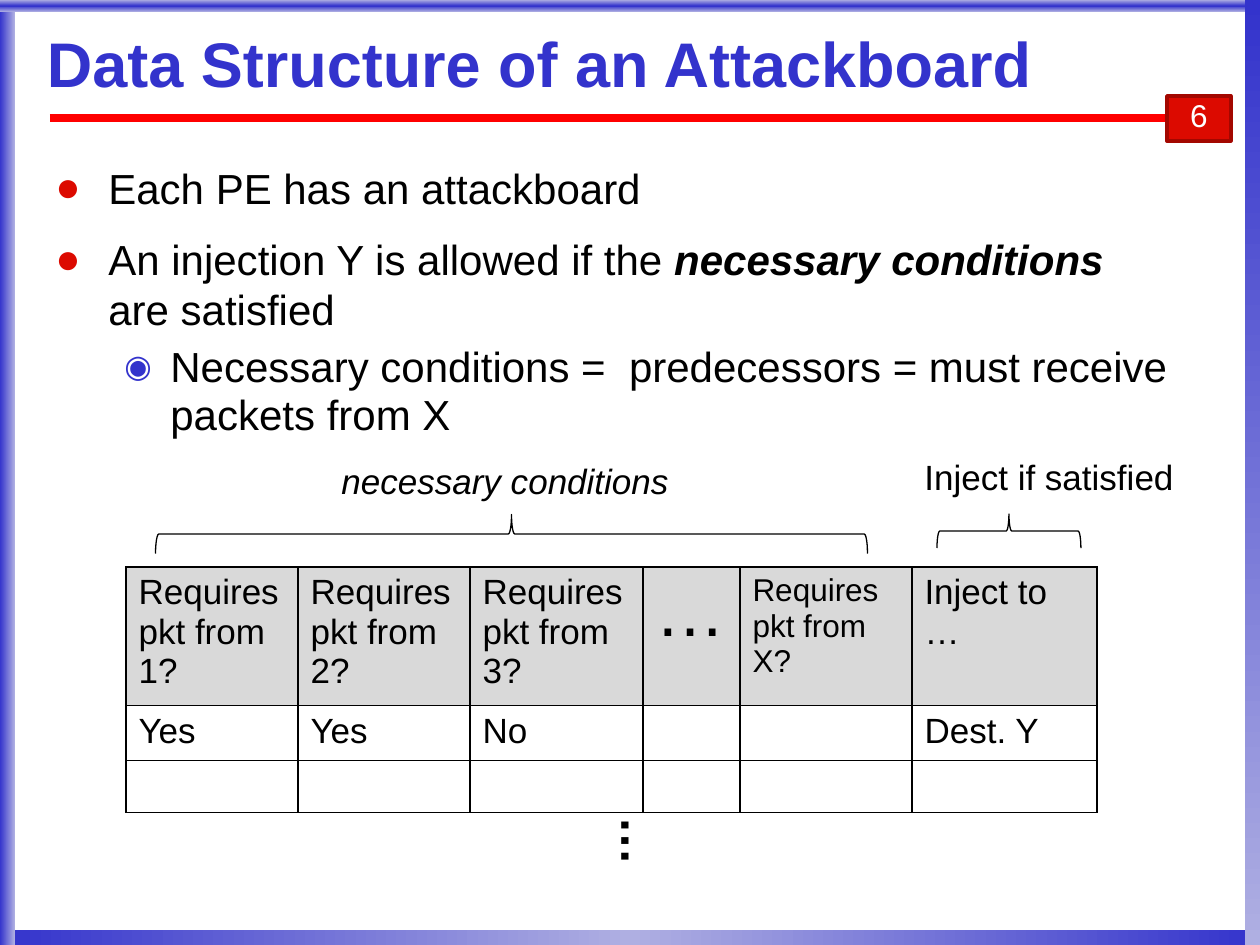
import pptx
import pptx.util
import pptx.dml.color
import pptx.enum.shapes
import pptx.enum.text
import pptx.oxml
import pptx.oxml.ns

PX = 914400 // 126
COLORS = {"blue": "3333CC", "pale": "AFAFE2", "red": "DC0A00", "dark_red": "A30700",
          "rule": "FF0000", "black": "000000", "white": "FFFFFF", "gray": "D9D9D9"}
SHAPES = pptx.enum.shapes.MSO_SHAPE


def rgb(name):
    """Return the named color."""
    return pptx.dml.color.RGBColor.from_string(COLORS[name])


def px(*lengths):
    """Turn px lengths into EMU."""
    return [pptx.util.Emu(length * PX) for length in lengths]


def xml(body):
    """Parse one element in the DrawingML namespace."""
    name, rest = body[1:].split(" ", 1)
    return pptx.oxml.parse_xml(f"<{name} {pptx.oxml.ns.nsdecls('a')} {rest}")


def add_run(paragraph, text, size=20, color="black", bold=False, italic=False):
    """Append formatted text to a paragraph and return the run."""
    run = paragraph.add_run()
    run.text = text
    font = run.font
    font.name, font.size = "Arial", pptx.util.Pt(size)
    font.bold, font.italic = bold, italic
    font.color.rgb = rgb(color)
    return run


def add_label(slide, box, text, wrap=True, rotation=0, **style):
    """Add a one-line text box."""
    shape = slide.shapes.add_textbox(*px(*box))
    shape.rotation = rotation
    shape.text_frame.word_wrap = wrap
    paragraph = shape.text_frame.paragraphs[0]
    paragraph.line_spacing = 0.85
    add_run(paragraph, text, **style)
    return shape


def add_band(slide, box, stops, angle):
    """Add a borderless gradient band."""
    shape = slide.shapes.add_shape(SHAPES.RECTANGLE, *px(*box))
    shape.shadow.inherit = False
    shape.line.fill.background()
    step = 100000 // (len(stops) - 1)
    colors = "".join(f'<a:gs pos="{index * step}"><a:srgbClr val="{COLORS[stop]}"/></a:gs>'
                     for index, stop in enumerate(stops))
    gradient = xml(f'<a:gradFill rotWithShape="1"><a:gsLst>{colors}</a:gsLst>'
                   f'<a:lin ang="{angle * 60000}" scaled="0"/></a:gradFill>')
    shape._element.spPr.find(pptx.oxml.ns.qn("a:prstGeom")).addnext(gradient)


def add_frame(slide, left, top, width, height):
    """Add the gradient bands around the slide."""
    right, bottom = left + width, top + height
    add_band(slide, (left, bottom - 15, width, 15), ("blue", "pale", "blue"), 0)
    add_band(slide, (left, top, 15, height), ("blue", "pale"), 0)
    add_band(slide, (left, top, width, 12), ("pale", "blue", "pale"), 90)
    add_band(slide, (right - 15, top, 15, height), ("blue", "pale"), 90)


def add_header(slide, left, top, width, height):
    """Add the title, the red rule and the page number."""
    rule = slide.shapes.add_connector(pptx.enum.shapes.MSO_CONNECTOR.STRAIGHT,
                                      *px(left + 3, top + 99, left + width, top + 99))
    rule.line.color.rgb = rgb("rule")
    rule.line.width = pptx.util.Pt(4.5)
    rule._element.spPr.append(xml("<a:effectLst />"))

    title = slide.shapes.add_textbox(*px(left, top, width, height))
    frame = title.text_frame
    frame.word_wrap = True
    frame.vertical_anchor = pptx.enum.text.MSO_ANCHOR.MIDDLE
    frame.margin_left = frame.margin_right = frame.margin_top = frame.margin_bottom = 0
    frame.paragraphs[0].line_spacing = 0.95
    run = add_run(frame.paragraphs[0], "Data Structure of an Attackboard",
                  size=36, color="blue", bold=True)
    run.font._element.find(pptx.oxml.ns.qn("a:solidFill")).addnext(xml(
        '<a:effectLst ><a:outerShdw dist="35921" dir="2700000">'
        '<a:srgbClr val="C0C0C0"/></a:outerShdw></a:effectLst>'))

    badge = slide.shapes.add_shape(SHAPES.RECTANGLE, *px(left + 1120, top + 77, 64, 45))
    badge.shadow.inherit = False
    badge.fill.solid()
    badge.fill.fore_color.rgb = rgb("red")
    badge.line.color.rgb = rgb("dark_red")
    badge.line.width = pptx.util.Pt(2)
    badge.text_frame.vertical_anchor = pptx.enum.text.MSO_ANCHOR.TOP
    paragraph = badge.text_frame.paragraphs[0]
    paragraph.alignment = pptx.enum.text.PP_ALIGN.CENTER
    paragraph.line_spacing = 0.85
    add_run(paragraph, "6", size=18, color="white")


def add_bullets(slide, left, top, width, height):
    """Add the bulleted statements."""
    frame = slide.shapes.add_textbox(*px(left, top, width, height)).text_frame
    frame.word_wrap = True
    main = ("●", "red", 100, 53, 53, 12, 1.0)
    detail = ("◉", "blue", 75, 115, 46, 6, 0.94)
    items = [
        (main, [("Each PE has an attackboard", {})]),
        (main, [("An injection Y is allowed if the ", {}),
                ("necessary conditions ", {"bold": True, "italic": True}),
                ("are satisfied", {})]),
        (detail, [("Necessary conditions =  predecessors = must receive packets from X", {})]),
    ]
    for index, (level, runs) in enumerate(items):
        symbol, color, size, margin, hanging, before, spacing = level
        paragraph = frame.add_paragraph() if index else frame.paragraphs[0]
        paragraph.line_spacing = spacing
        paragraph.space_before = pptx.util.Pt(before if index else 0)
        properties = paragraph._element.get_or_add_pPr()
        properties.set("marL", str(margin * PX))
        properties.set("indent", str(-hanging * PX))
        if level is detail:
            properties.set("lvl", "1")
        for body in (f'<a:buClr ><a:srgbClr val="{COLORS[color]}"/></a:buClr>',
                     f'<a:buSzPct val="{size * 1000}"/>',
                     '<a:buFont typeface="Arial"/>',
                     f'<a:buChar char="{symbol}"/>'):
            properties.append(xml(body))
        for text, style in runs:
            add_run(paragraph, text, size=24, **style)


def add_brace(slide, left, top, width, height):
    """Add an upward brace that spans the given box."""
    shift = (width - height) // 2
    shape = slide.shapes.add_shape(SHAPES.RIGHT_BRACE,
                                   *px(left + shift, top - shift, height, width))
    shape.rotation = 270
    shape.shadow.inherit = False
    shape.fill.background()
    shape.line.color.rgb = rgb("black")
    shape.line.width = pptx.util.Pt(0.75)


def style_cell(cell, fill):
    """Set the fill and black borders of a cell."""
    properties = cell._tc.get_or_add_tcPr()
    for side in "LRTB":
        properties.append(xml(f'<a:ln{side} w="12700"><a:solidFill><a:srgbClr '
                              f'val="{COLORS["black"]}"/></a:solidFill></a:ln{side}>'))
    if fill:
        cell.fill.solid()
        cell.fill.fore_color.rgb = rgb(fill)
    else:
        cell.fill.background()


def add_attackboard(slide, left, top, width, height):
    """Add the attackboard table with its braces and labels."""
    rows = [[f"Requires pkt from {source}?" for source in (1, 2, 3)]
            + ["…", "Requires pkt from X?", "Inject to …"],
            ["Yes", "Yes", "No", "", "", "Dest. Y"],
            [""] * 6]
    sizes = {"…": 40, "Requires pkt from X?": 18}
    table = slide.shapes.add_table(3, 6, *px(left, top, width, height)).table
    table.first_row = table.horz_banding = False
    for column, length in zip(table.columns, px(172, 172, 173, 97, 172, 185)):
        column.width = length
    for row, length in zip(table.rows, px(129, 52, 52)):
        row.height = length
    for row, texts in enumerate(rows):
        for column, text in enumerate(texts):
            cell = table.cell(row, column)
            style_cell(cell, None if row else "gray")
            if text:
                add_run(cell.text_frame.paragraphs[0], text, size=sizes.get(text, 20))

    add_brace(slide, left + 30, top - 53, 712, 39)
    add_label(slide, (left + 203, top - 107, 355, 49), "necessary conditions",
              wrap=False, italic=True)
    add_brace(slide, left + 811, top - 53, 144, 34)
    add_label(slide, (left + 786, top - 111, 295, 49), "Inject if satisfied")
    add_label(slide, (left + 451, top + 242, 74, 63), "…",
              wrap=False, rotation=270, size=28, bold=True)


def main():
    """Build and save the presentation."""
    presentation = pptx.Presentation()
    presentation.slide_width = pptx.util.Inches(10)
    presentation.slide_height = pptx.util.Inches(7.5)
    slide = presentation.slides.add_slide(presentation.slide_layouts[6])
    add_frame(slide, 0, 0, 1260, 945)
    add_header(slide, 47, 19, 1172, 93)
    add_bullets(slide, 43, 156, 1143, 291)
    add_attackboard(slide, 126, 567, 971, 233)
    presentation.save("out.pptx")


if __name__ == "__main__":
    main()
